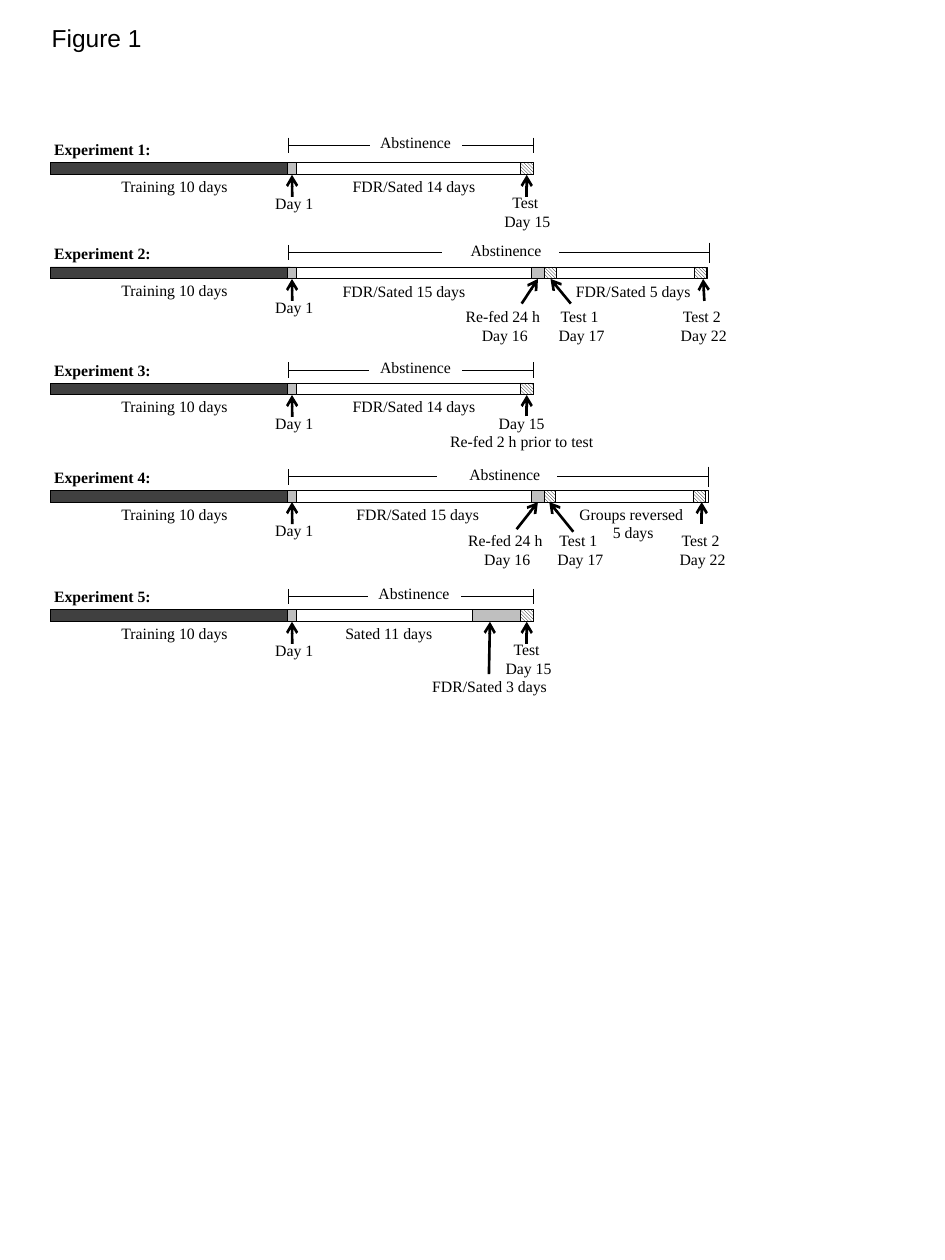
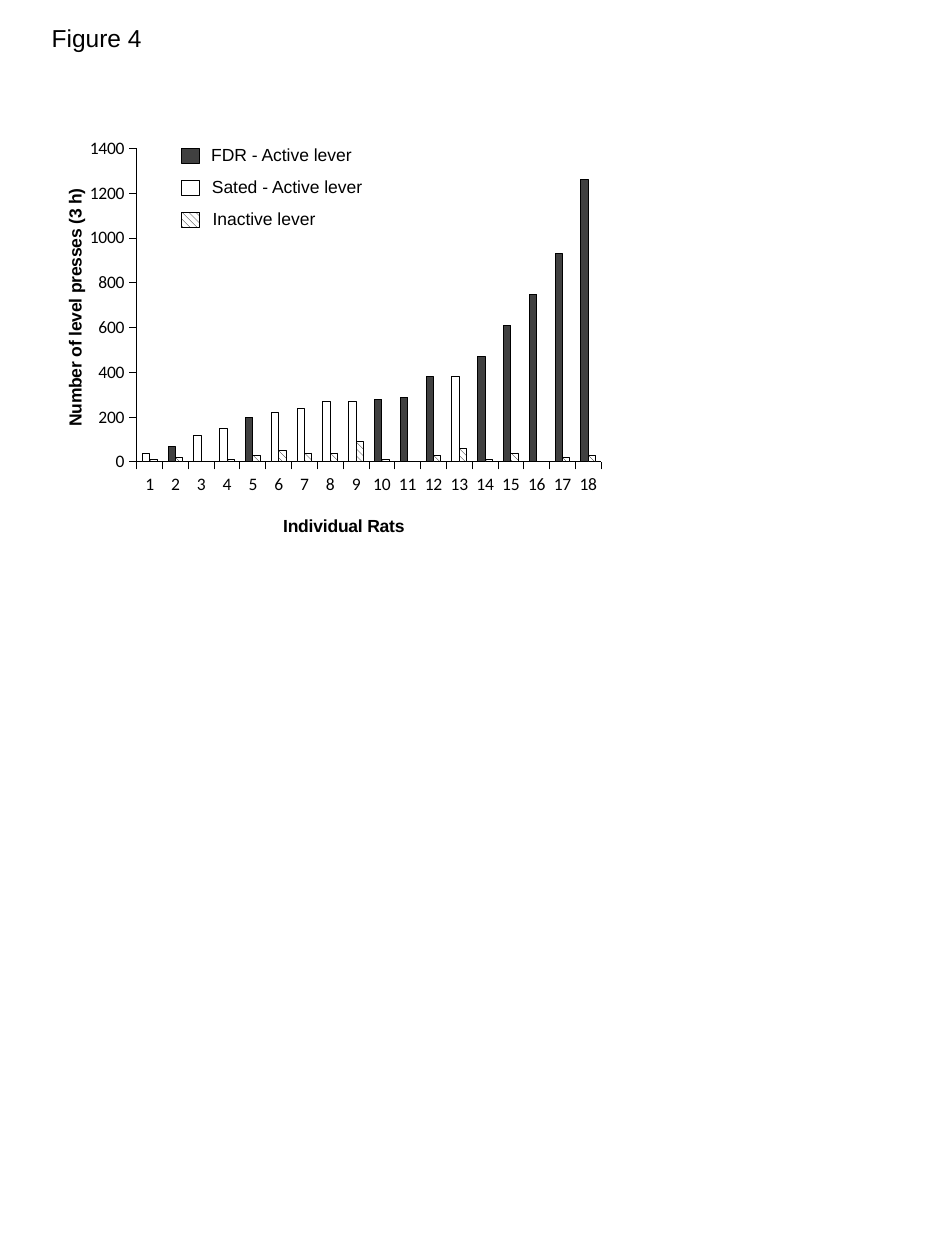
"""Build the experiment timelines and the lever-press chart."""
from dataclasses import dataclass

from lxml import etree
from pptx import Presentation
from pptx.chart.data import CategoryChartData
from pptx.dml.color import RGBColor
from pptx.enum.chart import XL_CHART_TYPE, XL_TICK_MARK
from pptx.enum.dml import MSO_PATTERN
from pptx.enum.shapes import MSO_CONNECTOR, MSO_SHAPE
from pptx.enum.text import MSO_ANCHOR, MSO_AUTO_SIZE, PP_ALIGN
from pptx.oxml.ns import qn
from pptx.util import Pt

LEFT, CENTER = PP_ALIGN.LEFT, PP_ALIGN.CENTER
TOP = MSO_ANCHOR.TOP
GROW = MSO_AUTO_SIZE.SHAPE_TO_FIT_TEXT
RECT = MSO_SHAPE.RECTANGLE
STRAIGHT = MSO_CONNECTOR.STRAIGHT
COLUMNS = XL_CHART_TYPE.COLUMN_CLUSTERED
OUTSIDE, NO_TICK = XL_TICK_MARK.OUTSIDE, XL_TICK_MARK.NONE
DENSE = MSO_PATTERN.DARK_DOWNWARD_DIAGONAL
WIDE = MSO_PATTERN.WIDE_DOWNWARD_DIAGONAL
BOTTOM = 2


@dataclass(frozen=True)
class Theme:
    """Colours, fonts, type sizes and line widths."""
    black: RGBColor = RGBColor(0, 0, 0)
    white: RGBColor = RGBColor(255, 255, 255)
    dark: RGBColor = RGBColor(0x40, 0x40, 0x40)
    grey: RGBColor = RGBColor(0xBF, 0xBF, 0xBF)
    sans: str = "Arial"
    serif: str = "Times New Roman"
    axis_font: str = "Calibri"
    title_size: float = 14
    chart_size: float = 10
    label_size: float = 9
    thin: float = 0.5
    thick: float = 1.5


THEME = Theme()


@dataclass(frozen=True)
class Experiment:
    """One timeline; steps are fill, x, width, arrow tail x, tail drop, free tip x."""
    top: float
    rule: float
    gap: tuple
    steps: tuple
    notes: tuple
    end: float = 304.6
    caption: float = 237.4
    end_tick: float = 4.4
    rest: tuple = ()


EXPERIMENTS = (
    Experiment(
        93.1, 10, (211.7, 264.2),
        ((DENSE, 297.4, 7.2, 301, 19.4, None),),
        (("FDR/Sated 14 days", 236.5, 4.5, 90), ("Test \nDay 15", 301.3, 13.7, 90))),
    Experiment(
        152.6, 8.2, (252.7, 319.7),
        ((DENSE, 311, 7.2, 326.2, 20.9, None),
         (DENSE, 396.7, 7.2, 402.5, 19.4, 401.8),
         (THEME.grey, 303.8, 7.2, 298.1, 20.9, None)),
        (("FDR/Sated 15 days", 230.8, 4.9, 90), ("FDR/Sated 5 days", 361.8, 4.9, 90),
         ("Re-fed 24 h \nDay 16", 288.4, 19.4, 90), ("Test 1 \nDay 17", 332.3, 19.4, 90),
         ("Test 2 \nDay 22", 402.1, 19.4, 90)),
        405.4, 289.1, 5.8, (318.2, 86.4)),
    Experiment(
        218.9, 7.4, (211, 264.2),
        ((DENSE, 297.4, 7.2, 301, 19.1, None),),
        (("FDR/Sated 14 days", 236.5, 4.5, 90),
         ("Day 15\nRe-fed 2 h prior to test", 298.1, 13.7, 96.5))),
    Experiment(
        280.1, 7.6, (249.8, 318.2),
        ((DENSE, 310.3, 7.2, 327.6, 23.8, None),
         (DENSE, 396, 7.2, 401, 19.4, 401),
         (THEME.grey, 303.8, 7.2, 295.2, 22.3, None)),
        (("FDR/Sated 15 days", 238.7, 4.5, 90), ("Groups reversed \n5 days", 361.8, 4.5, 90),
         ("Re-fed 24 h \nDay 16", 289.8, 19.4, 90), ("Test 1 \nDay 17", 331.6, 19.4, 90),
         ("Test 2 \nDay 22", 401.4, 19.4, 90)),
        404.6, 288.4, 5.8, (316.8, 87.8)),
    Experiment(
        348.5, 7.6, (210.2, 263.5),
        ((DENSE, 297.4, 7.2, 301, 19.4, None),
         (THEME.grey, 270, 27.4, 279.4, 36.7, 280)),
        (("Sated 11 days", 222.1, 4.5, 75.6), ("Test \nDay 15", 302, 13.7, 90),
         ("FDR/Sated 3 days", 279.7, 34.6, 90)),
        caption=236.5),
)
BAR_LEFT, BAR_HEIGHT = 28.8, 6.8
BAR_WIDTH, TRAINING_WIDTH = 275.8, 137.2
BRACKET_LEFT, TICK = 164.9, 4.4
DAY_1 = (THEME.grey, 164.2, 5.3, 167, 19.4, None)

ACTIVE = (40, 70, 120, 150, 200, 220, 240, 270, 270,
          280, 290, 380, 380, 470, 610, 750, 930, 1260)
INACTIVE = (10, 20, 0, 10, 30, 50, 40, 40, 90, 10, 0, 30, 60, 10, 40, 0, 20, 30)
SATED_RATS = (1, 3, 4, 6, 7, 8, 9, 13)
LEGEND = (("FDR - Active lever", THEME.dark, 95.8),
          ("Sated - Active lever", THEME.white, 101.5),
          ("Inactive lever", WIDE, 74.2))


def write(tf, text, font=THEME.serif, size=THEME.label_size, bold=False, align=LEFT):
    """Write one paragraph per line of text in the given format."""
    for i, line in enumerate(text.split("\n")):
        p = tf.add_paragraph() if i else tf.paragraphs[0]
        p.alignment = align
        r = p.add_run()
        r.text = line
        r.font.name, r.font.size, r.font.bold = font, Pt(size), bold
        r.font.color.rgb = THEME.black


def paint(target, fill):
    """Give a shape or chart format a solid or hatched fill and a thin outline."""
    if isinstance(fill, RGBColor):
        target.fill.solid()
        target.fill.fore_color.rgb = fill
    else:
        target.fill.patterned()
        target.fill.pattern = fill
        target.fill.fore_color.rgb = THEME.black
        target.fill.back_color.rgb = THEME.white
    stroke(target.line, THEME.thin)


def stroke(line, width):
    """Set a black line of the given width."""
    line.color.rgb = THEME.black
    line.width = Pt(width)


def set_layout(parent, **values):
    """Fix the place of a chart part in fractions of the chart."""
    old = parent.find(qn("c:layout"))
    if old is not None:
        parent.remove(old)
    layout = etree.Element(qn("c:layout"))
    manual = etree.SubElement(layout, qn("c:manualLayout"))
    for name, value in values.items():
        etree.SubElement(manual, qn(f"c:{name}")).set("val", str(value))
    parent.insert(0 if parent.find(qn("c:tx")) is None else 1, layout)


class Deck:
    """Hold the theme and current slide and draw each kind of element."""

    def __init__(self, prs, theme):
        """Keep the presentation and its theme."""
        self.prs, self.theme, self.s = prs, theme, None

    def slide(self, title):
        """Start a slide with its figure title."""
        self.s = self.prs.slides.add_slide(self.prs.slide_layouts[5])
        sp = self.s.shapes.title
        sp.left, sp.top, sp.width, sp.height = Pt(22.3), Pt(9.4), Pt(66.2), Pt(24.5)
        tf = sp.text_frame
        tf.word_wrap, tf.auto_size, tf.vertical_anchor = False, GROW, TOP
        write(tf, title, font=self.theme.sans, size=self.theme.title_size)

    def text(self, text, x, y, w, h=17.6, wrap=True, **fmt):
        """Add a text box."""
        tf = self.s.shapes.add_textbox(Pt(x), Pt(y), Pt(w), Pt(h)).text_frame
        tf.word_wrap, tf.auto_size = wrap, GROW
        write(tf, text, **fmt)

    def note(self, text, cx, y, w=90):
        """Add a text box centred on cx."""
        h = 28.1 if "\n" in text else 17.6
        self.text(text, cx - w / 2, y, w, h, align=CENTER)

    def rect(self, fill, x, y, w, h):
        """Add an outlined rectangle."""
        sp = self.s.shapes.add_shape(RECT, Pt(x), Pt(y), Pt(w), Pt(h))
        sp.shadow.inherit = False
        paint(sp, fill)
        return sp

    def line(self, x0, y0, x1, y1, width=THEME.thin):
        """Add a straight line."""
        cx = self.s.shapes.add_connector(STRAIGHT, Pt(x0), Pt(y0), Pt(x1), Pt(y1))
        stroke(cx.line, width)
        etree.SubElement(cx._element.spPr, qn("a:effectLst"))
        return cx

    def arrow(self, x0, y0, box, tip):
        """Point at the middle of a box's lower side, or at a free tip."""
        x1 = x0 if tip is None else tip
        cx = self.line(x0, y0, x1, (box.top + box.height).pt if hasattr(box.top + box.height, "pt")
                       else (box.top + box.height) / Pt(1), self.theme.thick)
        ln = cx._element.spPr.find(qn("a:ln"))
        etree.SubElement(ln, qn("a:tailEnd")).set("type", "arrow")
        if tip is None:
            cx.end_connect(box, BOTTOM)

    def bracket(self, e):
        """Draw the abstinence span with a gap for its caption."""
        y = e.top - e.rule
        for x, inner, half in ((BRACKET_LEFT, e.gap[0], TICK), (e.end, e.gap[1], e.end_tick)):
            self.line(x, y, inner, y)
            self.line(x, y - half, x, y + half)
        self.note("Abstinence", e.caption, y - 10.6)

    def timeline(self, number, e):
        """Draw one experiment."""
        self.text(f"Experiment {number}:", 23.8, e.top - 16.6, 103.7, bold=True)
        self.bracket(e)
        if e.rest:
            self.rect(self.theme.white, e.rest[0], e.top, e.rest[1], BAR_HEIGHT)
        self.rect(self.theme.white, BAR_LEFT, e.top, BAR_WIDTH, BAR_HEIGHT)
        self.rect(self.theme.dark, BAR_LEFT, e.top, TRAINING_WIDTH, BAR_HEIGHT)
        for fill, x, w, tail, drop, tip in (*e.steps, DAY_1):
            box = self.rect(fill, x, e.top, w, BAR_HEIGHT)
            self.arrow(tail, e.top + drop, box, tip)
        common = (("Training 10 days", 99.7, 4.5, 90), ("Day 1", 168.1, 14, 90))
        for text, cx, dy, w in common + e.notes:
            self.note(text, cx, e.top + dy, w)

    def axis(self, axis, title, x, y):
        """Format an axis and place its title."""
        axis.has_major_gridlines = False
        axis.major_tick_mark, axis.minor_tick_mark = OUTSIDE, NO_TICK
        stroke(axis.format.line, self.theme.thin)
        write(axis.axis_title.text_frame, title, font=self.theme.sans,
              size=self.theme.chart_size, bold=True, align=CENTER)
        set_layout(axis.axis_title._element, xMode="edge", yMode="edge", x=x, y=y)

    def chart(self):
        """Add the lever-press chart."""
        data = CategoryChartData()
        data.categories = [str(n) for n in range(1, len(ACTIVE) + 1)]
        data.add_series("Series 1", ACTIVE)
        data.add_series("Series 2", INACTIVE)
        chart = self.s.shapes.add_chart(
            COLUMNS, Pt(-3.6), Pt(10.8), Pt(545), Pt(327.6), data).chart
        chart.has_title = chart.has_legend = False
        chart.font.name, chart.font.size = self.theme.axis_font, Pt(self.theme.chart_size)
        chart.font.color.rgb = self.theme.black
        plot = chart.plots[0]
        plot.gap_width, plot.overlap, plot.vary_by_categories = 150, 0, False
        for series, fill in zip(plot.series, (self.theme.dark, WIDE)):
            series.invert_if_negative = False
            paint(series.format, fill)
        for rat in SATED_RATS:
            paint(plot.series[0].points[rat - 1].format, self.theme.white)
        self.axis(chart.category_axis, "Individual Rats", 0.3, 0.86)
        value = chart.value_axis
        self.axis(value, "Number of level presses (3 h)", 0.07, 0.29)
        value.axis_title._element.find(".//" + qn("a:bodyPr")).set("rot", "-5400000")
        value.minimum_scale, value.maximum_scale, value.major_unit = 0, 1400, 200
        set_layout(chart._chartSpace.find(".//" + qn("c:plotArea")), layoutTarget="inner",
                   xMode="edge", yMode="edge", x=0.15, y=0.226, w=0.487, h=0.547)

    def legend(self):
        """Add the key to the columns."""
        for i, (text, fill, w) in enumerate(LEGEND):
            y = 84.8 + 18.2 * i
            self.rect(fill, 103.9, y, 10.1, 8.6)
            self.text(text, 113.6 + 0.4 * i, y - 6, w, 19.4, wrap=False,
                      font=self.theme.sans, size=self.theme.chart_size)


def main():
    """Build and save both slides."""
    prs = Presentation()
    prs.slide_width, prs.slide_height = Pt(540), Pt(720)
    deck = Deck(prs, THEME)
    deck.slide("Figure 1")
    for number, experiment in enumerate(EXPERIMENTS, 1):
        deck.timeline(number, experiment)
    deck.slide("Figure 4")
    deck.chart()
    deck.legend()
    prs.save("out.pptx")


if __name__ == "__main__":
    main()
